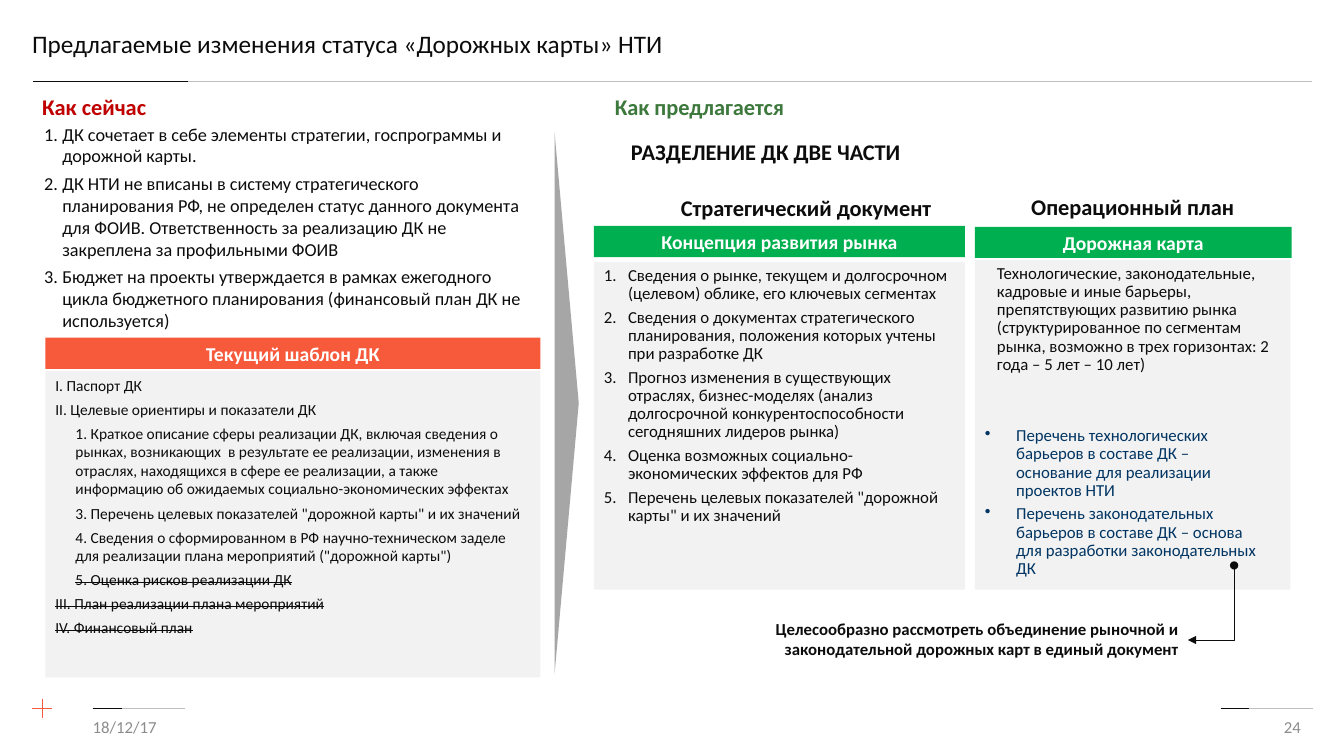
import collections

import lxml.etree
import pptx
import pptx.dml.color
import pptx.enum.shapes
import pptx.enum.text
import pptx.oxml.ns
import pptx.util

RGBColor = pptx.dml.color.RGBColor
SHAPES = pptx.enum.shapes.MSO_SHAPE
CONNECTORS = pptx.enum.shapes.MSO_CONNECTOR
ALIGN = pptx.enum.text.PP_ALIGN
ANCHOR = pptx.enum.text.MSO_ANCHOR
Box = collections.namedtuple("Box", "left top width height")

INK = RGBColor(0x0C, 0x0C, 0x0C)
WHITE = RGBColor(0xFF, 0xFF, 0xFF)
PANEL = RGBColor(0xF2, 0xF2, 0xF2)
RULE = RGBColor(0xBF, 0xBF, 0xBF)
FOOTER = RGBColor(0x8C, 0x8C, 0x8C)
ARROW = RGBColor(0xA6, 0xA6, 0xA6)
ORANGE = RGBColor(0xF7, 0x59, 0x3B)
GREEN = RGBColor(0x00, 0xB0, 0x50)
DARK_GREEN = RGBColor(0x3D, 0x78, 0x3C)
RED = RGBColor(0xC0, 0x00, 0x00)
NAVY = RGBColor(0x00, 0x34, 0x62)

PX_PER_INCH = 100
FONT = "Calibri"

CURRENT_ISSUES = [
    "ДК сочетает в себе элементы стратегии, госпрограммы и дорожной карты.",
    "ДК НТИ не вписаны в систему стратегического планирования РФ, не определен статус данного документа для ФОИВ. Ответственность за реализацию ДК не закреплена за профильными ФОИВ",
    "Бюджет на проекты утверждается в рамках ежегодного цикла бюджетного планирования (финансовый план ДК не используется)",
]
TEMPLATE_SECTIONS = [
    ("I. Паспорт ДК", 0, False),
    ("II. Целевые ориентиры и показатели ДК", 0, False),
    ("1. Краткое описание сферы реализации ДК, включая сведения о рынках, возникающих  в результате ее реализации, изменения в отраслях, находящихся в сфере ее реализации, а также информацию об ожидаемых социально-экономических эффектах", 20, False),
    ('3. Перечень целевых показателей "дорожной карты" и их значений', 20, False),
    ('4. Сведения о сформированном в РФ научно-техническом заделе для реализации плана мероприятий ("дорожной карты")', 20, False),
    ("5. Оценка рисков реализации ДК", 20, True),
    ("III. План реализации плана мероприятий", 0, True),
    ("IV. Финансовый план", 0, True),
]
CONCEPT_ITEMS = [
    "Сведения о рынке, текущем и долгосрочном (целевом) облике, его ключевых сегментах",
    "Сведения о документах стратегического планирования, положения которых учтены при разработке ДК",
    "Прогноз изменения в существующих отраслях, бизнес-моделях (анализ долгосрочной конкурентоспособности сегодняшних лидеров рынка)",
    "Оценка возможных социально-экономических эффектов для РФ",
    'Перечень целевых показателей "дорожной карты" и их значений',
]
BARRIERS = "Технологические, законодательные, кадровые и иные барьеры, препятствующих развитию рынка (структурированное по сегментам рынка, возможно в трех горизонтах: 2 года – 5 лет – 10 лет)"
BARRIER_LISTS = [
    "Перечень технологических барьеров в составе ДК – основание для реализации проектов НТИ",
    "Перечень законодательных барьеров в составе ДК – основа для разработки законодательных ДК",
]
MERGE_NOTE = "Целесообразно рассмотреть объединение рыночной и законодательной дорожных карт в единый документ"


def px(length):
    return pptx.util.Emu(length * 914400 // PX_PER_INCH)


def add_child(parent, tag, **attributes):
    child = lxml.etree.SubElement(parent, pptx.oxml.ns.qn(tag))
    for name, value in attributes.items():
        child.set(name, value)


def write(shape, texts, size, color, bold=False, align=ALIGN.LEFT, anchor=ANCHOR.TOP,
          margin=10, indents=(0,), hanging=0, bullet=None, before=0, after=0,
          spacing=None, struck=()):
    frame = shape.text_frame
    frame.word_wrap = True
    frame.vertical_anchor = anchor
    frame.margin_left = frame.margin_right = px(margin)
    frame.margin_top = frame.margin_bottom = px(5)
    for index, text in enumerate(texts):
        paragraph = frame.add_paragraph() if index else frame.paragraphs[0]
        paragraph.text = text
        paragraph.alignment = align
        paragraph.line_spacing = spacing
        if index and before:
            paragraph.space_before = pptx.util.Pt(before)
        paragraph.space_after = pptx.util.Pt(after)
        properties = paragraph._p.get_or_add_pPr()
        properties.set("marL", str(px(indents[index % len(indents)])))
        properties.set("indent", str(-px(hanging)))
        if bullet == "number":
            add_child(properties, "a:buAutoNum", type="arabicPeriod")
        elif bullet:
            add_child(properties, "a:buChar", char=bullet)
        font = paragraph.font
        font.name = FONT
        font.size = pptx.util.Pt(size)
        font.bold = bold
        font.color.rgb = color
        if struck and struck[index]:
            font._rPr.set("strike", "sngStrike")


def add_text(slide, box, texts, size, color, **style):
    write(slide.shapes.add_textbox(*map(px, box)), texts, size, color, **style)


def add_block(slide, box, fill, kind=SHAPES.RECTANGLE):
    shape = slide.shapes.add_shape(kind, *map(px, box))
    shape.shadow.inherit = False
    shape.fill.solid()
    shape.fill.fore_color.rgb = fill
    shape.line.fill.background()
    return shape


def add_header(slide, box, text, fill, margin=10):
    write(add_block(slide, box, fill), [text], 14, WHITE, bold=True,
          align=ALIGN.CENTER, anchor=ANCHOR.MIDDLE, margin=margin)


def add_line(slide, start, end, color, kind=CONNECTORS.STRAIGHT):
    line = slide.shapes.add_connector(kind, *map(px, start + end))
    line.line.color.rgb = color
    line.line.width = pptx.util.Pt(0.5)
    add_child(line._element.spPr, "a:effectLst")
    return line


def draw_rule(slide, left, top, width, accent):
    add_line(slide, (left, top), (left + width, top), RULE)
    add_line(slide, (left, top), (left + accent, top), INK)


def draw_title(slide, box):
    left, top, width, height = box
    add_text(slide, Box(left - 11, top, 975, height), ["Предлагаемые изменения статуса «Дорожных карты» НТИ"],
             18, INK, anchor=ANCHOR.MIDDLE, spacing=0.9)
    draw_rule(slide, left, top + height, width, 153)


def draw_footer(slide, box):
    left, top, width, height = box
    right = left + width
    add_line(slide, (left + 10, top - 10), (left + 10, top + 9), ORANGE)
    add_line(slide, (left, top), (left + 20, top), ORANGE)
    draw_rule(slide, left + 60, top, 92, 29)
    draw_rule(slide, right - 91, top, 91, 28)
    add_text(slide, Box(left + 50, top - 2, 300, height), ["18/12/17"], 12, FOOTER, anchor=ANCHOR.MIDDLE)
    add_text(slide, Box(right - 302, top - 2, 300, height), ["24"], 12, FOOTER,
             align=ALIGN.RIGHT, anchor=ANCHOR.MIDDLE)


def draw_current_state(slide, box):
    left, top, width, height = box
    add_text(slide, Box(left, top, 235, 37), ["Как сейчас"], 16, RED, bold=True)
    add_text(slide, Box(left, top + 29, width, 246), CURRENT_ISSUES, 13, INK,
             indents=(20,), hanging=18, bullet="number", after=4)
    panel_left, panel_width = left + 13, width - 13
    panel = add_block(slide, Box(panel_left, top + 280, panel_width, height - 280), PANEL)
    texts, indents, struck = zip(*TEMPLATE_SECTIONS)
    write(panel, texts, 11, INK, indents=indents, before=4, struck=struck)
    add_header(slide, Box(panel_left, top + 247, panel_width, 31), "Текущий шаблон ДК", ORANGE)


def draw_transition(slide, box):
    left, top, width, height = box
    shift = (height - width) // 2
    triangle = add_block(slide, Box(left - shift, top + shift, height, width), ARROW,
                         SHAPES.ISOSCELES_TRIANGLE)
    triangle.rotation = 90


def draw_strategy(slide, box):
    left, top, width, height = box
    add_text(slide, Box(left, top, 421, 37), ["Стратегический документ"], 16, INK,
             bold=True, align=ALIGN.CENTER)
    add_header(slide, Box(left, top + 36, width, 31), "Концепция развития рынка", GREEN)
    panel = add_block(slide, Box(left, top + 72, width, height - 72), PANEL)
    write(panel, CONCEPT_ITEMS, 12, INK, indents=(24,), hanging=25, bullet="number",
          before=4, spacing=0.9)


def draw_operations(slide, box):
    left, top, width, height = box
    add_text(slide, Box(left, top, width, 37), ["Операционный план"], 16, INK,
             bold=True, align=ALIGN.CENTER)
    panel = add_block(slide, Box(left, top + 71, width, height - 71), PANEL)
    write(panel, [BARRIERS], 12, INK, indents=(12,), spacing=0.9)
    add_header(slide, Box(left, top + 38, width + 1, 31), "Дорожная карта", GREEN, margin=4)
    add_text(slide, Box(left, top + 232, 294, 161), BARRIER_LISTS, 12, NAVY,
             indents=(31,), hanging=31, bullet="•", before=4, spacing=0.9)


def draw_merge_note(slide, box):
    left, top, width, height = box
    add_text(slide, Box(left, top + 48, 514, 50), [MERGE_NOTE], 12, INK, bold=True, align=ALIGN.RIGHT)
    right = left + width
    arrow = add_line(slide, (right - 60, top + 14), (right + 14, top + 60), INK, CONNECTORS.ELBOW)
    properties = arrow._element.spPr
    properties.find(pptx.oxml.ns.qn("a:prstGeom")).set("prst", "bentConnector2")
    properties.find(pptx.oxml.ns.qn("a:xfrm")).set("rot", "5400000")
    outline = properties.find(pptx.oxml.ns.qn("a:ln"))
    add_child(outline, "a:headEnd", type="oval")
    add_child(outline, "a:tailEnd", type="triangle")


def main():
    presentation = pptx.Presentation()
    presentation.slide_width = px(1333)
    presentation.slide_height = px(750)
    slide = presentation.slides.add_slide(presentation.slide_layouts[6])
    draw_title(slide, Box(33, 9, 1268, 72))
    draw_footer(slide, Box(32, 703, 1270, 40))
    draw_current_state(slide, Box(32, 88, 504, 584))
    draw_transition(slide, Box(550, 131, 24, 538))
    add_text(slide, Box(600, 88, 370, 37), ["Как предлагается"], 16, DARK_GREEN, bold=True)
    add_text(slide, Box(614, 132, 700, 37), ["РАЗДЕЛЕНИЕ ДК ДВЕ ЧАСТИ"], 16, INK, bold=True, indents=(2,))
    draw_strategy(slide, Box(589, 188, 368, 397))
    draw_operations(slide, Box(967, 187, 313, 398))
    draw_merge_note(slide, Box(665, 561, 559, 98))
    presentation.save("out.pptx")


if __name__ == "__main__":
    main()
